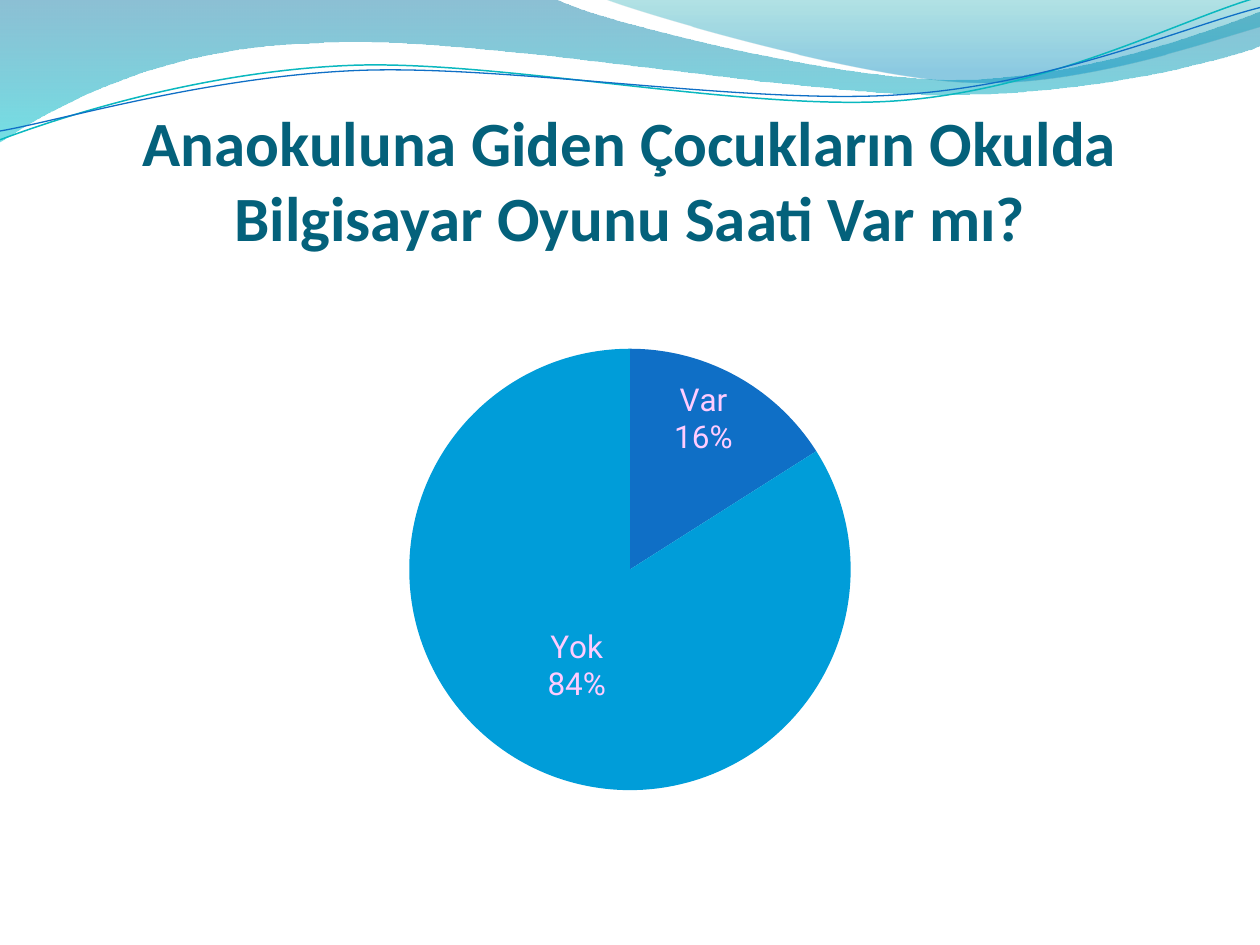
from dataclasses import dataclass

from lxml.etree import SubElement
from pptx import Presentation
from pptx.chart.data import CategoryChartData
from pptx.dml.color import RGBColor
from pptx.enum.chart import XL_CHART_TYPE, XL_LABEL_POSITION
from pptx.enum.text import MSO_ANCHOR, MSO_AUTO_SIZE, PP_ALIGN
from pptx.oxml import parse_xml
from pptx.oxml.ns import nsdecls, qn
from pptx.shapes.autoshape import Shape
from pptx.slide import Slide
from pptx.util import Inches, Pt

WIDTH, HEIGHT = Inches(10), Inches(7.5)
MARGIN = WIDTH // 20
CONTENT_WIDTH = WIDTH - 2 * MARGIN

TITLE_TEAL = RGBColor(0x04, 0x61, 0x7B)
BLUE = RGBColor(0x0F, 0x6F, 0xC6)
SKY = RGBColor(0x00, 0x9D, 0xD9)
TURQUOISE = RGBColor(0x0A, 0xB8, 0xBF)
PINK = RGBColor(0xFF, 0xCC, 0xFF)
BLACK = RGBColor(0, 0, 0)

Point = tuple[float, float]


@dataclass
class Stop:
    position: float
    color: RGBColor
    opacity: int


@dataclass
class Wave:
    """An outline in inches: a segment of one point is straight, of three a curve."""
    start: Point
    segments: list[list[Point]]
    stops: tuple[Stop, ...] = ()
    line: RGBColor | None = None
    weight: float = 0


@dataclass
class Slice:
    category: str
    label: str
    value: int
    color: RGBColor
    position: XL_LABEL_POSITION


WAVES = [
    Wave((0, 0), [
        [(4.4, -0.01)],
        [(4.76, 0.17), (6.64, 0.63), (7.58, 0.63)],
        [(8.53, 0.63), (9.58, 0.26), (10, 0.09)],
        [(10.01, 0.36)],
        [(9.83, 0.44), (8.7, 0.76), (7.46, 0.75)],
        [(6.22, 0.75), (3.82, 0.28), (2.57, 0.34)],
        [(1.29, 0.36), (0.46, 0.83), (-0.01, 1.13)],
    ], stops=(Stop(0, RGBColor(0x00, 0x74, 0xA1), 45),
              Stop(1, RGBColor(0x00, 0xC6, 0xCF), 55))),
    Wave((4.79, -0.01), [
        [(5.09, 0.11), (6.82, 0.62), (7.69, 0.65)],
        [(8.56, 0.69), (9.61, 0.32), (10, 0.21)],
        [(10, 0)],
    ], stops=(Stop(0, RGBColor(0x00, 0xA1, 0xA9), 30),
              Stop(0.8, RGBColor(0x00, 0x8B, 0xBF), 45))),
    Wave((0, 1.11), [
        [(0.48, 0.93), (1.58, 0.57), (2.77, 0.52)],
        [(3.95, 0.47), (5.93, 0.89), (7.13, 0.8)],
        [(8.33, 0.71), (9.38, 0.15), (9.98, -0.02)],
    ], line=TURQUOISE, weight=0.85),
    Wave((0, 1.04), [
        [(0.47, 0.96), (1.64, 0.61), (2.83, 0.56)],
        [(4.03, 0.51), (5.97, 0.84), (7.17, 0.75)],
        [(8.36, 0.67), (9.41, 0.21), (10, 0.06)],
    ], line=BLUE, weight=0.75),
]

SLICES = [
    Slice("var", "Var", 16, BLUE, XL_LABEL_POSITION.INSIDE_END),
    Slice("yok", "Yok", 84, SKY, XL_LABEL_POSITION.CENTER),
]


def bend(shape: Shape, segments: list[list[Point]]) -> None:
    """Turn each run of three straight steps of a curved segment into a Bézier."""
    steps = iter(list(shape.element.iter(qn("a:lnTo"))))
    for segment in segments:
        group = [next(steps) for _ in segment]
        if len(group) == 3:
            curve = parse_xml(f"<a:cubicBezTo {nsdecls('a')}/>")
            group[0].addprevious(curve)
            for step in group:
                curve.append(step[0])
                step.getparent().remove(step)


def draw_wave(page: Slide, wave: Wave) -> None:
    points = [(Inches(x), Inches(y)) for segment in wave.segments for x, y in segment]
    builder = page.shapes.build_freeform(*(Inches(length) for length in wave.start))
    builder.add_line_segments(points, close=bool(wave.stops))
    shape = builder.convert_to_shape()
    shape.shadow.inherit = False
    bend(shape, wave.segments)
    if wave.stops:
        shape.fill.gradient()
        shape.fill.gradient_angle = 270
        for target, stop in zip(shape.fill.gradient_stops, wave.stops):
            target.position = stop.position
            target.color.rgb = stop.color
        for color, stop in zip(shape.element.spPr.iter(qn("a:srgbClr")), wave.stops):
            SubElement(color, qn("a:alpha"), val=str(stop.opacity * 1000))
        shape.line.fill.background()
    else:
        shape.fill.background()
        shape.line.color.rgb = wave.line
        shape.line.width = Pt(wave.weight)


def write_title(page: Slide, text: str) -> None:
    title = page.shapes.title
    title.left, title.top = MARGIN, Inches(0.77)
    title.width, title.height = CONTENT_WIDTH, HEIGHT // 6
    frame = title.text_frame
    frame.word_wrap = True
    frame.auto_size = MSO_AUTO_SIZE.NONE
    frame.vertical_anchor = MSO_ANCHOR.BOTTOM
    frame.margin_left = frame.margin_right = frame.margin_bottom = 0
    frame.margin_top = Inches(0.05)
    para = frame.paragraphs[0]
    para.alignment = PP_ALIGN.CENTER
    span = para.add_run()
    span.text = text
    span.font.name, span.font.size, span.font.bold = "Calibri", Pt(36), True
    span.font.color.rgb = TITLE_TEAL
    # Bring the title in front of the waves
    title.element.getparent().append(title.element)


def draw_pie(page: Slide, slices: list[Slice]) -> None:
    data = CategoryChartData()
    data.categories = [part.category for part in slices]
    data.add_series("Series 1", [part.value for part in slices])
    chart = page.shapes.add_chart(XL_CHART_TYPE.PIE, MARGIN, Inches(2.12),
                                  CONTENT_WIDTH, Inches(4.8), data).chart
    chart.has_title = chart.has_legend = False
    chart.font.name, chart.font.size = "Vollkorn", Pt(18)
    chart.font.color.rgb = BLACK
    plot = chart.plots[0]
    plot.vary_by_categories = True

    # General labels: category and percentage
    plot.has_data_labels = True
    labels = plot.data_labels
    labels.show_category_name = labels.show_percentage = True
    labels.show_value = False
    labels.font.name, labels.font.size = "Roboto", Pt(18)
    labels.font.color.rgb = PINK

    # Colour and label of each slice
    for index, part in enumerate(slices):
        point = plot.series[0].points[index]
        point.format.fill.solid()
        point.format.fill.fore_color.rgb = part.color
        point.format.line.fill.background()
        frame = point.data_label.text_frame
        for row, text in enumerate((part.label, f"{part.value}%")):
            para = frame.add_paragraph() if row else frame.paragraphs[0]
            span = para.add_run()
            span.text = text
            span.font.name, span.font.size = "Roboto", Pt(18)
            span.font.color.rgb = PINK
        point.data_label.position = part.position

    # Centre the pie at 73% of the chart's height
    area = chart.element.find(".//" + qn("c:plotArea"))
    for old in area.findall(qn("c:layout")):
        area.remove(old)
    layout = parse_xml(f"<c:layout {nsdecls('c')}><c:manualLayout/></c:layout>")
    settings = {"layoutTarget": "inner", "xMode": "edge", "yMode": "edge",
                "x": 0.305, "y": 0.135, "w": 0.39, "h": 0.73}
    for name, value in settings.items():
        SubElement(layout[0], qn(f"c:{name}"), val=str(value))
    area.insert(0, layout)


def main() -> None:
    deck = Presentation()
    deck.slide_width, deck.slide_height = WIDTH, HEIGHT
    page = deck.slides.add_slide(deck.slide_layouts[5])
    for wave in WAVES:
        draw_wave(page, wave)
    write_title(page, "Anaokuluna Giden Çocukların Okulda Bilgisayar Oyunu Saati Var mı?")
    draw_pie(page, SLICES)
    deck.save("out.pptx")


if __name__ == "__main__":
    main()
